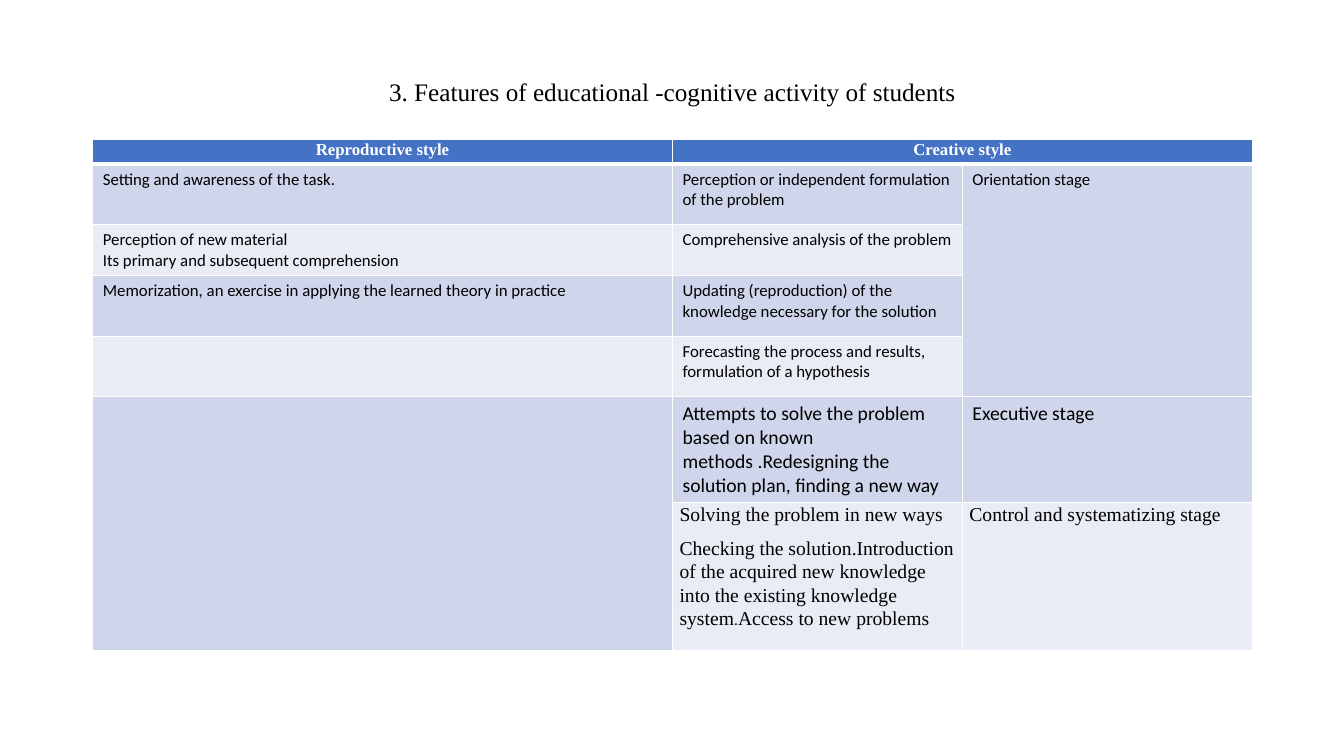
from lxml import etree
from pptx import Presentation
from pptx.dml.color import RGBColor
from pptx.enum import text
from pptx.oxml import ns
from pptx.util import Inches, Pt

TITLE = "3. Features of educational -cognitive activity of students"
HEADINGS = ["Reproductive style", "Creative style", None]
STAGES = [
    (["Setting and awareness of the task."],
     ["Perception or independent formulation of the problem"],
     ["Orientation stage"]),
    (["Perception of new material", "Its primary and subsequent comprehension"],
     ["Comprehensive analysis of the problem"], None),
    (["Memorization, an exercise in applying the learned theory in practice"],
     ["Updating (reproduction) of the knowledge necessary for the solution"], None),
    (None, ["Forecasting the process and results, formulation of a hypothesis"], None),
    (None,
     ["Attempts to solve the problem based on known methods .Redesigning the solution plan, finding a new way"],
     ["Executive stage"]),
    (None,
     ["Solving the problem in new ways",
      [("Checking the solution.Introduction of the acquired new knowledge into the existing knowledge system", "closing"),
       (".", "stop"), ("Access to new problems", "closing")]],
     ["Control and systematizing stage"]),
]
ROW_STYLES = ["heading"] + ["body"] * 4 + ["large", "closing"]
MERGES = [((0, 1), (0, 2)), ((1, 2), (4, 2)), ((5, 0), (6, 0))]

SLIDE_W, SLIDE_H = 13.33, 7.5
LEFT, WIDTH = 0.92, 11.5
TITLE_TOP, TITLE_H, TITLE_LIFT = 0.4, 1.45, 0.45
TABLE_TOP = 1.38
COLUMN_SHARES = [0.5, 0.25, 0.25]
ROW_HEIGHTS = [0.25, 0.6, 0.46, 0.6, 0.6, 0.98, 1.47]

SERIF, SANS = "Times New Roman", "Calibri"
THEME = {
    "title": dict(name=SERIF, size=18, bold=False, color="000000"),
    "heading": dict(name=SERIF, size=12, bold=True, color="FFFFFF"),
    "body": dict(name=SANS, size=12, bold=False, color="000000"),
    "large": dict(name=SANS, size=14, bold=False, color="000000"),
    "closing": dict(name=SERIF, size=14, bold=False, color="000000"),
    "stop": dict(name=SANS, size=11, bold=False, color="000000"),
    "head_fill": "4472C4",
    "bands": ["CFD5EA", "E9EBF5"],
    "border": "FFFFFF",
}
TIGHT = dict(margin_left=Inches(0.07), margin_right=Inches(0.07),
             margin_top=0, margin_bottom=0)
LOOSE = dict(line_spacing=1.07, space_after=Pt(8))


def apply(target, formats):
    for key, value in formats.items():
        setattr(target, key, value)


def add_run(paragraph, words, style):
    run = paragraph.add_run()
    run.text = words
    look = THEME[style]
    apply(run.font, dict(name=look["name"], size=Pt(look["size"]), bold=look["bold"]))
    run.font.color.rgb = RGBColor.from_string(look["color"])


def add_borders(cell, row):
    widths = dict(lnL=1, lnR=1, lnT=3 if row == 1 else 1, lnB=3 if row == 0 else 1)
    properties = cell._tc.get_or_add_tcPr()
    for side, width in widths.items():
        line = etree.SubElement(properties, ns.qn("a:" + side), w=str(Pt(width)))
        solid = etree.SubElement(line, ns.qn("a:solidFill"))
        etree.SubElement(solid, ns.qn("a:srgbClr"), val=THEME["border"])


def fill_cell(cell, row, paragraphs):
    style = ROW_STYLES[row]
    tight = style in ("heading", "closing")
    add_borders(cell, row)
    cell.fill.solid()
    colour = THEME["bands"][(row - 1) % 2] if row else THEME["head_fill"]
    cell.fill.fore_color.rgb = RGBColor.from_string(colour)
    if tight:
        apply(cell, TIGHT)
    for index, content in enumerate(paragraphs or []):
        frame = cell.text_frame
        paragraph = frame.add_paragraph() if index else frame.paragraphs[0]
        if tight:
            apply(paragraph, LOOSE)
        if style == "heading":
            paragraph.alignment = text.PP_ALIGN.CENTER
        runs = [(content, style)] if isinstance(content, str) else content
        for words, run_style in runs:
            add_run(paragraph, words, run_style)


def add_title(slide):
    title = slide.shapes.title
    apply(title, dict(left=Inches(LEFT), top=Inches(TITLE_TOP),
                      width=Inches(WIDTH), height=Inches(TITLE_H)))
    apply(title.text_frame, dict(word_wrap=True, margin_bottom=Inches(TITLE_LIFT),
                                 vertical_anchor=text.MSO_ANCHOR.MIDDLE))
    paragraph = title.text_frame.paragraphs[0]
    apply(paragraph, dict(alignment=text.PP_ALIGN.CENTER, line_spacing=0.9))
    add_run(paragraph, TITLE, "title")


def add_stages(slide):
    rows = [[heading and [heading] for heading in HEADINGS], *STAGES]
    table = slide.shapes.add_table(
        len(rows), len(COLUMN_SHARES), Inches(LEFT), Inches(TABLE_TOP),
        Inches(WIDTH), Inches(sum(ROW_HEIGHTS))).table
    for column, share in zip(table.columns, COLUMN_SHARES):
        column.width = Inches(WIDTH * share)
    for row, height in zip(table.rows, ROW_HEIGHTS):
        row.height = Inches(height)
    for row, contents in enumerate(rows):
        for column, paragraphs in enumerate(contents):
            fill_cell(table.cell(row, column), row, paragraphs)
    for first, last in MERGES:
        table.cell(*first).merge(table.cell(*last))


def main():
    deck = Presentation()
    apply(deck, dict(slide_width=Inches(SLIDE_W), slide_height=Inches(SLIDE_H)))
    slide = deck.slides.add_slide(deck.slide_layouts[5])
    add_title(slide)
    add_stages(slide)
    deck.save("out.pptx")


if __name__ == "__main__":
    main()
